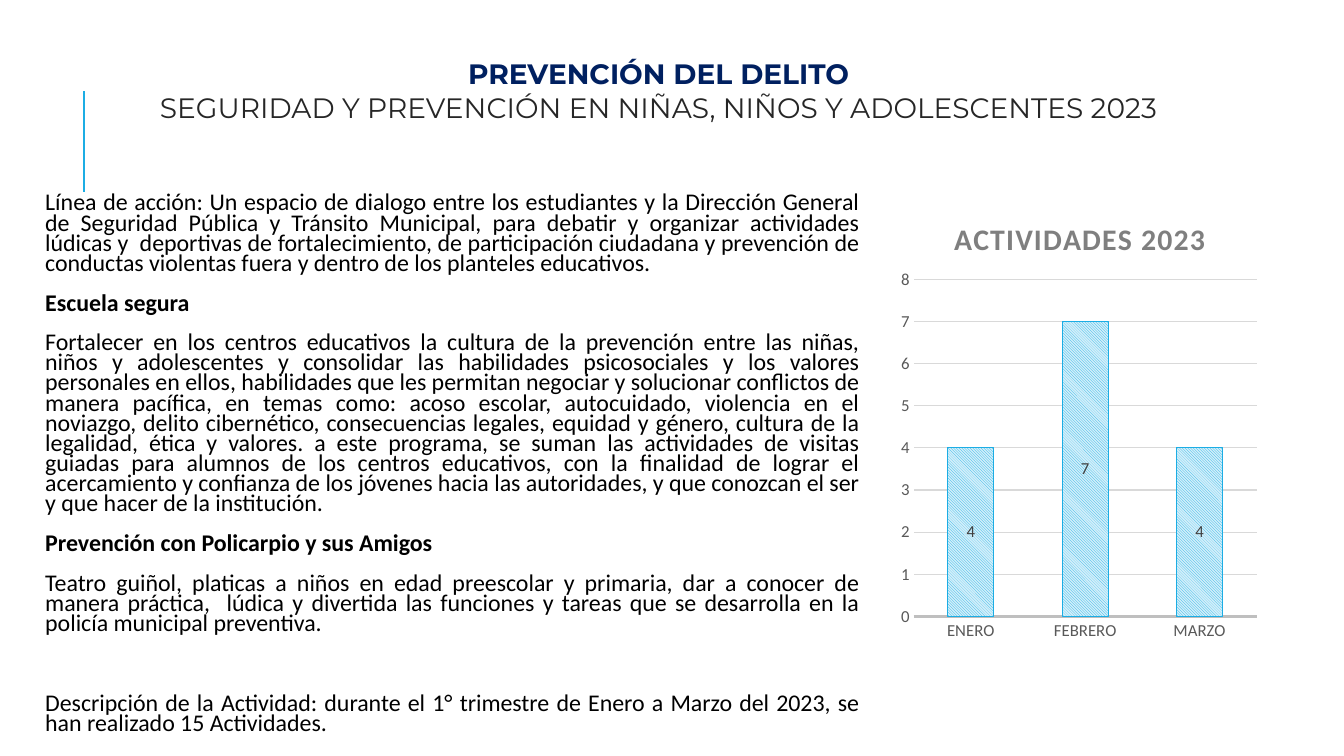
from lxml import etree
from pptx import Presentation, util as u
from pptx.chart.data import CategoryChartData
from pptx.dml.color import RGBColor
from pptx.enum import chart as ch, dml, shapes, text
from pptx.oxml import parse_xml
from pptx.oxml.ns import nsdecls, qn

HUES = {
    "sky": "1CADE4", "pale": "D2EFFA", "navy": "002060", "ink": "262626",
    "black": "000000", "title": "7F7F7F", "tick": "595959", "label": "404040",
    "axis": "BFBFBF", "grid": "D9D9D9",
}
HEAD = [
    ("PREVENCIÓN DEL DELITO", True, "navy"),
    ("SEGURIDAD Y PREVENCIÓN EN NIÑAS, NIÑOS Y ADOLESCENTES 2023", False, "ink"),
]
BODY = [
    ("Línea de acción: Un espacio de dialogo entre los estudiantes y la Dirección General de "
     "Seguridad Pública y Tránsito Municipal, para debatir y organizar actividades lúdicas y  "
     "deportivas de fortalecimiento, de participación ciudadana y prevención de conductas "
     "violentas fuera y dentro de los planteles educativos.", False),
    ("Escuela segura", True),
    ("Fortalecer en los centros educativos la cultura de la prevención entre las niñas, niños y "
     "adolescentes y consolidar las habilidades psicosociales y los valores personales en ellos, "
     "habilidades que les permitan negociar y solucionar conflictos de manera pacífica, en temas "
     "como: acoso escolar, autocuidado, violencia en el noviazgo, delito cibernético, "
     "consecuencias legales, equidad y género, cultura de la legalidad, ética y valores. a este "
     "programa, se suman las actividades de visitas guiadas para alumnos de los centros "
     "educativos, con la finalidad de lograr el acercamiento y confianza de los jóvenes hacia "
     "las autoridades, y que conozcan el ser y que hacer de la institución.", False),
    ("Prevención con Policarpio y sus Amigos", True),
    ("Teatro guiñol, platicas a niños en edad preescolar y primaria, dar a conocer de manera "
     "práctica,  lúdica y divertida las funciones y tareas que se desarrolla en la policía "
     "municipal preventiva.", False),
    ("Descripción de la Actividad: durante el 1° trimestre de Enero a Marzo del 2023, se han "
     "realizado 15 Actividades.", False),
]
DATA = {"ENERO": 4, "FEBRERO": 7, "MARZO": 4}


def put(obj, **vals):
    """Set each named value on an object."""
    for key, val in vals.items():
        setattr(obj, key, val)


def hue(name):
    """Return the named colour."""
    return RGBColor.from_string(HUES[name])


def style(font, name, size, tint, bold=False):
    """Format a font."""
    put(font, name=name, size=u.Pt(size), bold=bold)
    font.color.rgb = hue(tint)


def stroke(line, tint, width):
    """Format a line."""
    line.color.rgb = hue(tint)
    line.width = u.Pt(width)


def place(shape, box):
    """Move a placeholder to a box and fix its text frame."""
    put(shape, **dict(zip(("left", "top", "width", "height"), map(u.Cm, box))))
    put(shape.text_frame, word_wrap=True, auto_size=text.MSO_AUTO_SIZE.NONE,
        vertical_anchor=text.MSO_ANCHOR.TOP)
    return shape.text_frame


def draw_head(slide, box):
    """Fill the two-line title."""
    frame = place(slide.shapes.title, box)
    frame.text = "\n".join(line for line, _, _ in HEAD)
    for para, (_, bold, tint) in zip(frame.paragraphs, HEAD):
        put(para, alignment=text.PP_ALIGN.CENTER, line_spacing=1.0, space_before=u.Pt(0))
        style(para.runs[0].font, "Montserrat", 20, tint, bold)


def draw_rule(slide, box):
    """Draw the upright accent line."""
    left, top, width, height = box
    ends = map(u.Cm, (left, top + height, left + width, top))
    rule = slide.shapes.add_connector(shapes.MSO_CONNECTOR.STRAIGHT, *ends)
    stroke(rule.line, "sky", 1.5)
    etree.SubElement(rule.element.spPr, qn("a:effectLst"))


def draw_body(slide, box):
    """Fill the justified text."""
    frame = place(slide.placeholders[1], box)
    sides = ("margin_left", "margin_top", "margin_right", "margin_bottom")
    put(frame, **dict.fromkeys(sides, u.Cm(0.13)))
    frame.text = "\n".join(line for line, _ in BODY)
    for para, (_, bold) in zip(frame.paragraphs, BODY):
        put(para, alignment=text.PP_ALIGN.JUSTIFY, line_spacing=0.7,
            space_before=u.Pt(12), space_after=u.Pt(2))
        style(para.runs[0].font, "Calibri", 17.1, "black", bold)
        props = para._p.get_or_add_pPr()
        props.set("marL", str(u.Cm(0.25)))
        props.set("indent", "0")
        etree.SubElement(props, qn("a:buNone"))
    frame.paragraphs[-1].space_before = u.Pt(40.5)


def layout(**parts):
    """Build a manual chart layout from fractions."""
    tags = "".join(f'<c:{key} val="{val}"/>' for key, val in parts.items())
    return parse_xml(f'<c:layout {nsdecls("c")}><c:manualLayout>{tags}'
                     '</c:manualLayout></c:layout>')


def draw_chart(slide, box):
    """Add the column chart of monthly activities."""
    data = CategoryChartData()
    data.categories = list(DATA)
    data.add_series("Series 1", list(DATA.values()))
    chart = slide.shapes.add_chart(
        ch.XL_CHART_TYPE.COLUMN_STACKED, *map(u.Cm, box), data).chart
    style(chart.font, "Calibri", 10, "black")
    put(chart, has_legend=False, has_title=True)

    chart.chart_title.text_frame.text = "ACTIVIDADES 2023"
    run = chart.chart_title.text_frame.paragraphs[0].runs[0]
    style(run.font, "Calibri", 21.3, "title", True)
    run.font._element.set("spc", "100")
    chart.chart_title.include_in_layout = False

    for axis in (chart.category_axis, chart.value_axis):
        put(axis, major_tick_mark=ch.XL_TICK_MARK.NONE, minor_tick_mark=ch.XL_TICK_MARK.NONE)
        style(axis.tick_labels.font, "Calibri", 12, "tick")
    stroke(chart.category_axis.format.line, "axis", 1.5)
    put(chart.value_axis, minimum_scale=0, maximum_scale=8, major_unit=1)
    chart.value_axis.format.line.fill.background()
    stroke(chart.value_axis.major_gridlines.format.line, "grid", 0.75)

    plot = chart.plots[0]
    put(plot, gap_width=150, overlap=100, vary_by_categories=False, has_data_labels=True)
    put(plot.data_labels, show_value=True, position=ch.XL_LABEL_POSITION.CENTER)
    style(plot.data_labels.font, "Calibri", 12, "label")
    bars = plot.series[0].format
    bars.fill.patterned()
    bars.fill.pattern = dml.MSO_PATTERN.LIGHT_DOWNWARD_DIAGONAL
    bars.fill.fore_color.rgb = hue("sky")
    bars.fill.back_color.rgb = hue("pale")
    stroke(bars.line, "sky", 0.75)

    area = chart._chartSpace.chart.plotArea
    for old in area.findall(qn("c:layout")):
        area.remove(old)
    area.insert(0, layout(layoutTarget="inner", xMode="edge", yMode="edge",
                          x=0.05, y=0.18, w=0.93, h=0.75))


def main():
    """Build and save the slide."""
    deck = Presentation()
    put(deck, slide_width=u.Cm(33.87), slide_height=u.Cm(19.05))
    slide = deck.slides.add_slide(deck.slide_layouts[1])
    draw_rule(slide, (2.11, 2.29, 0, 2.54))
    draw_body(slide, (0.76, 4.78, 21.03, 13.89))
    draw_chart(slide, (22.56, 5, 9.3, 11.33))
    draw_head(slide, (0, 1.3, 33.2, 2.03))
    deck.save("out.pptx")


if __name__ == "__main__":
    main()
